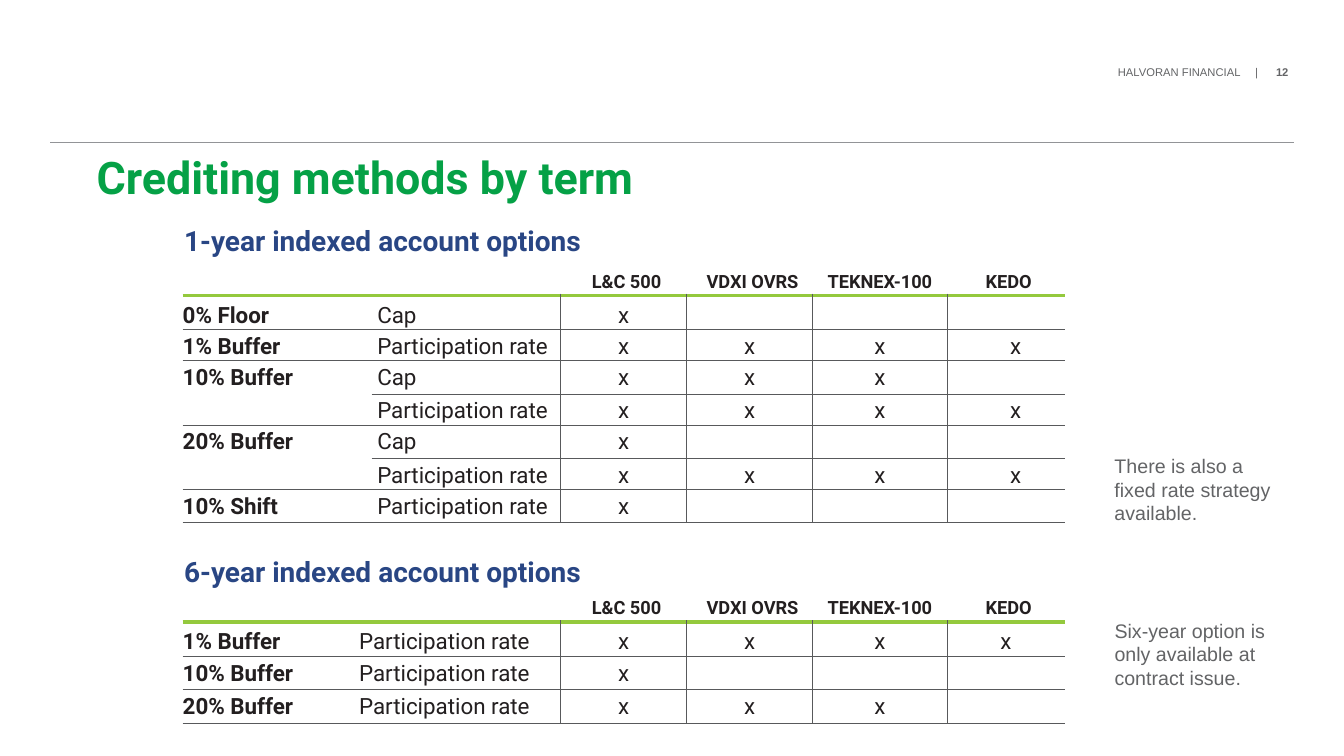
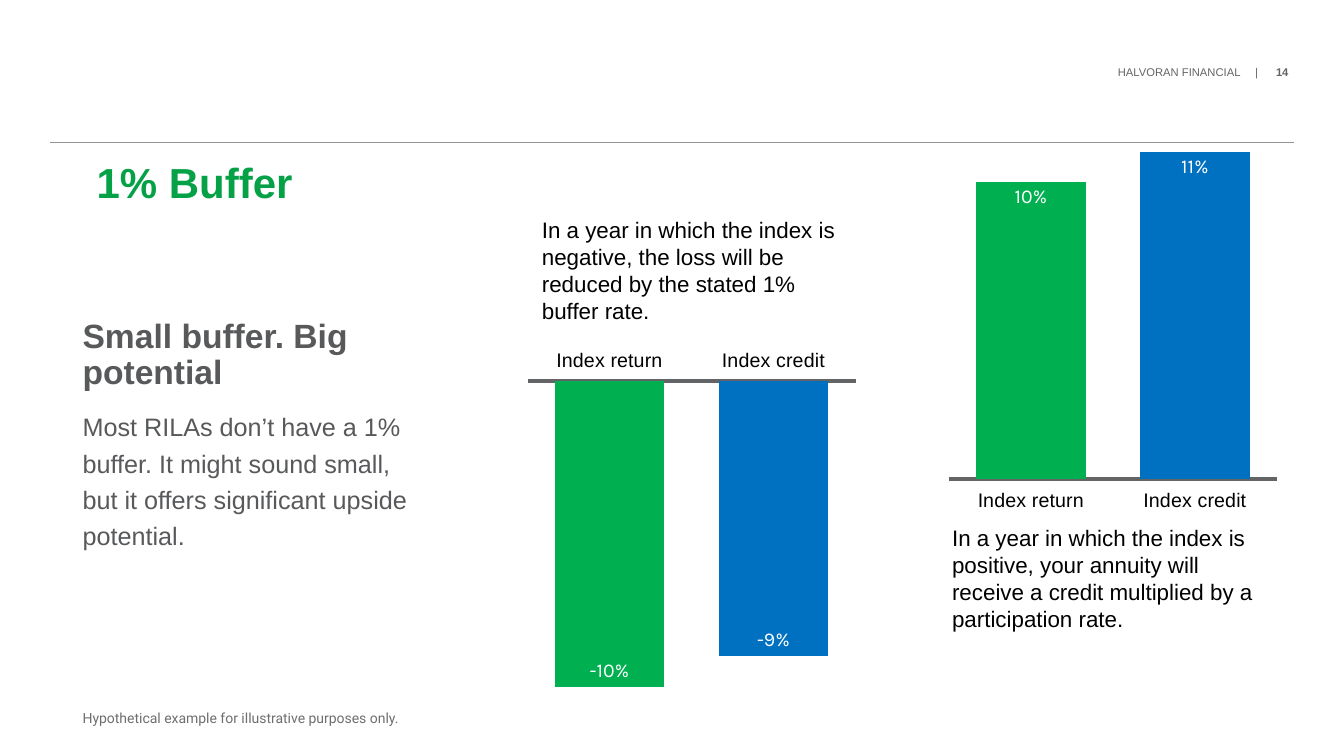
from lxml import etree
from pptx import Presentation
from pptx.chart.data import CategoryChartData
from pptx.dml.color import RGBColor
from pptx.enum.chart import XL_CHART_TYPE, XL_LABEL_POSITION, XL_TICK_LABEL_POSITION, XL_TICK_MARK
from pptx.enum.shapes import MSO_CONNECTOR
from pptx.enum.text import PP_ALIGN
from pptx.oxml.ns import qn
from pptx.util import Pt

COLUMN = XL_CHART_TYPE.COLUMN_CLUSTERED
INSIDE_END = XL_LABEL_POSITION.INSIDE_END
LABELS_HIGH = XL_TICK_LABEL_POSITION.HIGH
LABELS_LOW = XL_TICK_LABEL_POSITION.LOW
NO_TICK = XL_TICK_MARK.NONE
STRAIGHT = MSO_CONNECTOR.STRAIGHT
CENTER = PP_ALIGN.CENTER

COLORS = {
    "title": "05A146", "heading": "294684", "ink": "231F20", "black": "000000",
    "white": "FFFFFF", "gray": "636466", "body": "58595B", "footnote": "6E6E6E",
    "rule": "929497", "grid": "58595B", "accent": "94C93D",
    "return": "00B050", "credit": "0070C0",
}
STYLES = {
    "title": {"size": 32, "name": "Roboto", "bold": True, "color": "title"},
    "heading": {"size": 20, "name": "Roboto", "bold": True, "color": "heading"},
    "column": {"size": 13, "name": "Roboto", "bold": True, "color": "ink"},
    "label": {"size": 16, "name": "Roboto", "bold": True, "color": "ink"},
    "cell": {"size": 16, "name": "Roboto", "bold": False, "color": "ink"},
    "note": {"size": 14, "name": "Arial", "color": "gray"},
    "header": {"size": 8, "name": "Arial", "color": "gray"},
    "lead": {"size": 24, "name": "Arial", "bold": True, "color": "body"},
    "body": {"size": 18, "name": "Arial", "color": "body"},
    "footnote": {"size": 10, "name": "Roboto", "color": "footnote"},
    "caption": {"size": 16, "name": "Arial", "color": "black"},
    "chart": {"size": 10, "name": "Arial", "color": "gray"},
    "category": {"size": 14, "name": "Arial", "color": "black"},
    "value": {"size": 14, "name": "Karla", "color": "white"},
}
INDEXES = ["L&C 500", "VDXI OVRS", "TEKNEX-100", "KEDO"]
HEADER_INDENTS = [4, 4, 0, 4]
INDEX_WIDTHS = [90, 90, 96, 84]
ONE_YEAR = [
    ("0% Floor", "Cap", "x---"),
    ("1% Buffer", "Participation rate", "xxxx"),
    ("10% Buffer", "Cap", "xxx-"),
    ("", "Participation rate", "xxxx"),
    ("20% Buffer", "Cap", "x---"),
    ("", "Participation rate", "xxxx"),
    ("10% Shift", "Participation rate", "x---"),
]
SIX_YEAR = [
    ("1% Buffer", "Participation rate", "xxxx"),
    ("10% Buffer", "Participation rate", "x---"),
    ("20% Buffer", "Participation rate", "xxx-"),
]


def rgb(name):
    return RGBColor.from_string(COLORS[name])


def set_values(target, values):
    for name, value in values.items():
        setattr(target, name, value)


def set_font(font, style, **changes):
    values = {**STYLES[style], **changes}
    font.color.rgb = rgb(values.pop("color"))
    set_values(font, {**values, "size": Pt(values["size"])})


def add_text(slide, box, paragraphs, inset=(0, 0), spacing=None, tabs=(), **changes):
    """Place (text, style) paragraphs in a box of left, top, width, height."""
    frame = slide.shapes.add_textbox(*map(Pt, box)).text_frame
    across, down = map(Pt, inset)
    set_values(frame, {"word_wrap": True, "margin_left": across, "margin_right": across,
                       "margin_top": down, "margin_bottom": down})
    for number, (text, style) in enumerate(paragraphs):
        paragraph = frame.add_paragraph() if number else frame.paragraphs[0]
        if tabs:
            tab_list = etree.SubElement(paragraph._p.get_or_add_pPr(), qn("a:tabLst"))
            for position in tabs:
                etree.SubElement(tab_list, qn("a:tab"), pos=str(Pt(position)), algn="l")
        if spacing:
            paragraph.line_spacing = Pt(spacing)
        if number:
            paragraph.space_before = Pt(10)
        run = paragraph.add_run()
        run.text = text
        set_font(run.font, style, **changes)
    return frame


def add_note(slide, box, text, style="note"):
    add_text(slide, box, [(text, style)], inset=(7.2, 3.6))


def add_header(slide, number):
    frame = add_text(slide, (798.5, 46.8, 124, 11), [("HALVORAN FINANCIAL\t|\t", "header")],
                     tabs=(98, 113))
    run = frame.paragraphs[0].add_run()
    run.text = str(number)
    set_font(run.font, "header", bold=True)
    rule = slide.shapes.add_connector(STRAIGHT, Pt(36), Pt(102), Pt(924.5), Pt(102))
    rule.line.color.rgb = rgb("rule")
    rule.line.width = Pt(0.5)
    etree.SubElement(rule._element.spPr, qn("a:effectLst"))


def add_title(slide, top, text, **changes):
    add_text(slide, (69, top, 816, 75), [(text, "title")], spacing=31, **changes)


def set_borders(cell, borders):
    """Draw the given sides, as side: (colour, width), and clear the others."""
    properties = cell._tc.get_or_add_tcPr()
    for side in ("L", "R", "T", "B"):
        color, width = borders.get(side, (None, 0))
        line = etree.SubElement(properties, qn(f"a:ln{side}"), w=str(Pt(width)))
        if color:
            fill = etree.SubElement(line, qn("a:solidFill"))
            etree.SubElement(fill, qn("a:srgbClr"), val=COLORS[color])
        else:
            etree.SubElement(line, qn("a:noFill"))


def fill_cell(cell, text, style, top, align=None, indent=0):
    set_values(cell, {"margin_left": Pt(indent), "margin_right": 0,
                      "margin_top": Pt(top), "margin_bottom": 0})
    paragraph = cell.text_frame.paragraphs[0]
    paragraph.alignment = align
    set_font(paragraph.font, style)
    if text:
        run = paragraph.add_run()
        run.text = text
        set_font(run.font, style)


def add_options_table(slide, left, top, rows, label_widths, method_format, last_indent):
    widths = label_widths + INDEX_WIDTHS
    heights = [18, 24.5] + [23.75 if "-" in marks else 22 for _, _, marks in rows[1:]]
    table = slide.shapes.add_table(len(heights), len(widths), Pt(left), Pt(top),
                                   Pt(sum(widths)), Pt(sum(heights))).table
    set_values(table, {"first_row": False, "horz_banding": False})
    for column, width in zip(table.columns, widths):
        column.width = Pt(width)
    for row, height in zip(table.rows, heights):
        row.height = Pt(height)

    for column, name in enumerate([""] * 2 + INDEXES):
        indent = HEADER_INDENTS[column - 2] if column > 1 else 0
        fill_cell(table.cell(0, column), name, "column", 0.75, CENTER, indent)
    for number, (label, method, marks) in enumerate(rows, 1):
        margin = 5 if number == 1 else 3
        fill_cell(table.cell(number, 0), label, "label", margin)
        fill_cell(table.cell(number, 1), method, "cell", margin, **method_format)
        for column, mark in enumerate(marks, 2):
            indent = last_indent if column == len(widths) - 1 else 0
            fill_cell(table.cell(number, column), mark.strip("-"), "cell", margin, CENTER, indent)

    thin, thick = ("grid", 0.5), ("accent", 3)
    for number in range(len(heights)):
        for column in range(len(widths)):
            merged_below = number and number < len(rows) and not rows[number][0]
            borders = {}
            if column or not merged_below:
                borders["B"] = thin if number else thick
            if number and (column or rows[number - 1][0]):
                borders["T"] = thick if number == 1 else thin
            if number and column > 1:
                borders["L"] = thin
            if number and 0 < column < len(widths) - 1:
                borders["R"] = thin
            cell = table.cell(number, column)
            set_borders(cell, borders)
            cell.fill.background()
    for number, (label, _, _) in enumerate(rows, 1):
        if not label:
            table.cell(number - 1, 0).merge(table.cell(number, 0))


def add_return_chart(slide, box, values, limits, label_position):
    data = CategoryChartData(number_format="0%")
    data.categories = ["Index return", "Index credit"]
    data.add_series("Series 1", values)
    chart = slide.shapes.add_chart(COLUMN, *map(Pt, box), data).chart
    set_values(chart, {"has_legend": False, "has_title": False})
    set_font(chart.font, "chart")
    background = etree.Element(qn("c:spPr"))
    etree.SubElement(background, qn("a:noFill"))
    etree.SubElement(etree.SubElement(background, qn("a:ln")), qn("a:noFill"))
    chart._chartSpace.find(qn("c:txPr")).addprevious(background)

    minimum, maximum = limits
    set_values(chart.value_axis, {"visible": False, "has_major_gridlines": False,
                                  "minimum_scale": minimum, "maximum_scale": maximum})
    axis = chart.category_axis
    set_values(axis, {"major_tick_mark": NO_TICK, "minor_tick_mark": NO_TICK,
                      "tick_label_position": label_position})
    set_font(axis.tick_labels.font, "category")
    axis.format.line.color.rgb = rgb("gray")
    axis.format.line.width = Pt(3)

    plot = chart.plots[0]
    set_values(plot, {"gap_width": 50, "vary_by_categories": False})
    series = plot.series[0]
    series.invert_if_negative = False
    for number, color in enumerate(("return", "credit")):
        fill = series.points[number].format.fill
        fill.solid()
        fill.fore_color.rgb = rgb(color)
    labels = series.data_labels
    set_values(labels, {"show_value": True, "position": INSIDE_END,
                        "number_format": "0%", "number_format_is_linked": False})
    set_font(labels.font, "value")


def build_crediting_slide(slide):
    add_header(slide, 12)
    add_title(slide, 114, "Crediting methods by term")
    left = 130.5
    sections = [
        (160, 193, "1-year indexed account options", ONE_YEAR, [135, 135], {"indent": 4}, 14),
        (396, 426.5, "6-year indexed account options", SIX_YEAR, [100, 170],
         {"align": CENTER, "indent": 4}, 0),
    ]
    for heading_top, table_top, heading, *table in sections:
        add_text(slide, (left + 1, heading_top, 349, 25), [(heading, "heading")])
        add_options_table(slide, left, table_top, *table)
    add_note(slide, (789, 438.5, 145, 58), "Six-year option is only available at contract issue.")
    add_note(slide, (789, 321, 130, 58), "There is also a fixed rate strategy available.")


def build_buffer_slide(slide):
    add_header(slide, 14)
    add_title(slide, 116.5, "1% Buffer", size=30, name="Arial")
    add_text(slide, (59, 227.5, 240, 114), [
        ("Small buffer. Big potential", "lead"),
        ("Most RILAs don’t have a 1% buffer. It might sound small, "
         "but it offers significant upside potential.", "body"),
    ], spacing=26)
    add_text(slide, (59, 493, 240, 26),
             [("Hypothetical example for illustrative purposes only.", "footnote")], spacing=26)
    add_note(slide, (380, 151, 235.5, 109), "In a year in which the index is negative, "
             "the loss will be reduced by the stated 1% buffer rate.", "caption")
    add_note(slide, (673, 371, 244, 89), "In a year in which the index is positive, "
             "your annuity will receive a credit multiplied by a participation rate.", "caption")
    add_return_chart(slide, (372, 243.5, 244, 296.5), (-0.1, -0.09), (-0.12, 0), LABELS_HIGH)
    add_return_chart(slide, (673, 81.5, 244, 289.5), (0.1, 0.11), (0, 0.12), LABELS_LOW)


def main():
    presentation = Presentation()
    set_values(presentation, {"slide_width": Pt(960), "slide_height": Pt(540)})
    for build in (build_crediting_slide, build_buffer_slide):
        build(presentation.slides.add_slide(presentation.slide_layouts[6]))
    presentation.save("out.pptx")


if __name__ == "__main__":
    main()
